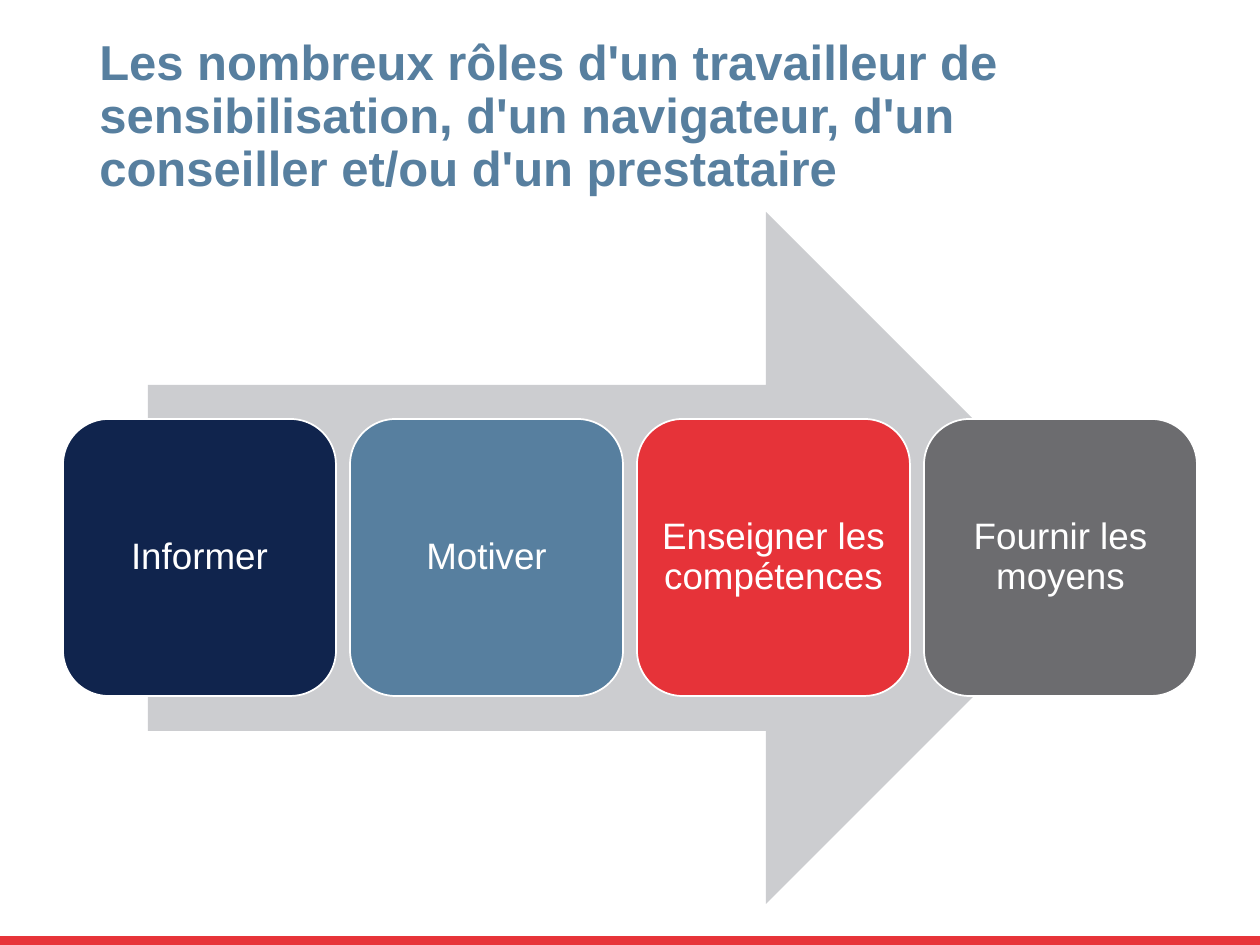
from dataclasses import dataclass

from pptx import Presentation
from pptx.dml.color import RGBColor
from pptx.enum.shapes import MSO_SHAPE
from pptx.enum.text import MSO_ANCHOR, PP_ALIGN
from pptx.util import Pt

RECTANGLE = MSO_SHAPE.RECTANGLE
ROUNDED = MSO_SHAPE.ROUNDED_RECTANGLE
RIGHT_ARROW = MSO_SHAPE.RIGHT_ARROW
MIDDLE = MSO_ANCHOR.MIDDLE
LEFT, CENTER = PP_ALIGN.LEFT, PP_ALIGN.CENTER

EMU_PER_PX = 914400 / 126
PAGE_WIDTH, PAGE_HEIGHT = 1260, 945


@dataclass(frozen=True)
class Theme:
    font: str = "Arial"
    title_size: int = 28
    card_size: int = 21
    line_spacing: float = 0.9
    white: str = "FFFFFF"
    navy: str = "10244D"
    steel: str = "577F9F"
    red: str = "E63339"
    footer_red: str = "E73439"
    grey: str = "6C6C6F"
    arrow_grey: str = "CCCDD0"


THEME = Theme()

TITLE = ("Les nombreux rôles d'un travailleur de sensibilisation, "
         "d'un navigateur, d'un conseiller et/ou d'un prestataire")
ROLES = [
    ("Informer", THEME.navy),
    ("Motiver", THEME.steel),
    ("Enseigner les compétences", THEME.red),
    ("Fournir les moyens", THEME.grey),
]


def px(length):
    return round(length * EMU_PER_PX)


def color(value):
    return RGBColor.from_string(value)


def add_filled_shape(page, kind, box, fill, outline=None):
    shape = page.shapes.add_shape(kind, *map(px, box))
    shape.shadow.inherit = False
    shape.fill.solid()
    shape.fill.fore_color.rgb = color(fill)
    if outline:
        shape.line.color.rgb = color(outline)
        shape.line.width = Pt(1)
    else:
        shape.line.fill.background()
    return shape


def write_text(frame, text, size, text_color, align, bold=False):
    frame.word_wrap = True
    frame.vertical_anchor = MIDDLE
    para = frame.paragraphs[0]
    para.alignment = align
    para.line_spacing = THEME.line_spacing
    span = para.add_run()
    span.text = text
    span.font.name = THEME.font
    span.font.size = Pt(size)
    span.font.bold = bold
    span.font.color.rgb = color(text_color)


def add_title(page, box):
    title = page.shapes.add_textbox(*map(px, box))
    write_text(title.text_frame, TITLE, THEME.title_size, THEME.steel, LEFT, bold=True)


def add_role_card(page, box, label, fill):
    card = add_filled_shape(page, ROUNDED, box, fill, THEME.white)
    frame = card.text_frame
    frame.margin_left = frame.margin_right = px(11)
    frame.margin_top = frame.margin_bottom = px(11)
    write_text(frame, label, THEME.card_size, THEME.white, CENTER)


def add_role_process(page, box):
    """Place equal cards across the box, in front of a centred arrow."""
    left, top, width, height = box
    arrow_width = round(width * 0.85)
    arrow_left = left + (width - arrow_width) // 2
    add_filled_shape(page, RIGHT_ARROW, (arrow_left, top, arrow_width, height),
                     THEME.arrow_grey)

    gap = 14
    card_width = (width - gap * (len(ROLES) - 1)) // len(ROLES)
    card_height = round(height * 0.4)
    card_top = top + (height - card_height) // 2
    for index, (label, fill) in enumerate(ROLES):
        card_left = left + index * (card_width + gap)
        add_role_card(page, (card_left, card_top, card_width, card_height), label, fill)


def main():
    deck = Presentation()
    deck.slide_width, deck.slide_height = px(PAGE_WIDTH), px(PAGE_HEIGHT)
    page = deck.slides.add_slide(deck.slide_layouts[6])
    add_filled_shape(page, RECTANGLE, (0, PAGE_HEIGHT - 9, PAGE_WIDTH, 9),
                     THEME.footer_red)
    add_title(page, (87, 26, 1086, 183))
    add_role_process(page, (63, 212, 1134, 692))
    deck.save("out.pptx")


if __name__ == "__main__":
    main()
